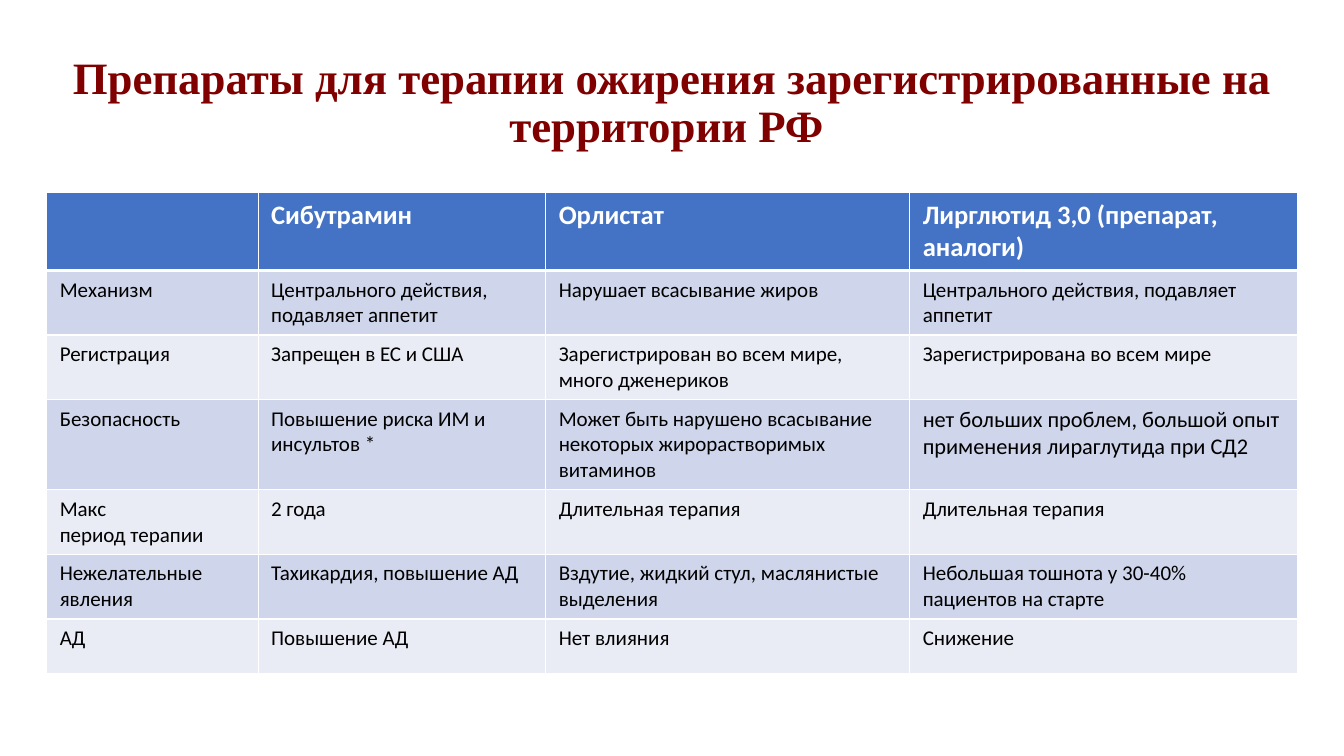
from dataclasses import dataclass

from lxml.etree import SubElement
from pptx import Presentation
from pptx.dml.color import RGBColor as RGB
from pptx.enum.text import MSO_ANCHOR as ANCHOR, PP_ALIGN as ALIGN
from pptx.oxml.ns import qn
from pptx.util import Pt


@dataclass(frozen=True)
class Theme:
    """Colours, fonts and type sizes of the slide."""
    title_font: str = "Times New Roman"
    table_font: str = "Calibri"
    title_color: str = "800000"
    header_fill: str = "4472C4"
    bands: tuple = ("CFD5EA", "E9EBF5")
    white: str = "FFFFFF"
    black: str = "000000"
    title_size: float = 32
    header_size: float = 19
    body_size: float = 15
    accent_size: float = 16
    border: float = 1
    header_border: float = 3


THEME = Theme()
LEFT, WIDTH = 33.4, 893.5
TITLE = "Препараты для терапии ожирения зарегистрированные на территории РФ "
COLUMNS = (151, 205.5, 260, 277)
ROW_HEIGHTS = (38.9, 44.7, 44.7, 62.6, 44.7, 44.7, 38.9)
ROWS = (
    ("", "Сибутрамин", "Орлистат", "Лирглютид 3,0 (препарат, аналоги)"),
    ("Механизм", "Центрального действия, подавляет аппетит",
     "Нарушает всасывание жиров", "Центрального действия, подавляет аппетит"),
    ("Регистрация", "Запрещен в ЕС и США",
     "Зарегистрирован во всем мире, много дженериков", "Зарегистрирована во всем мире"),
    ("Безопасность", "Повышение риска ИМ и инсультов *",
     "Может быть нарушено всасывание некоторых жирорастворимых витаминов",
     "нет больших проблем, большой опыт применения лираглутида при СД2"),
    ("Макс\nпериод терапии", "2 года", "Длительная терапия", "Длительная терапия"),
    ("Нежелательные явления", "Тахикардия, повышение АД",
     "Вздутие, жидкий стул, маслянистые выделения",
     "Небольшая тошнота у 30-40% пациентов на старте"),
    ("АД", "Повышение АД", "Нет влияния", "Снижение"),
)
ACCENT_CELL = (3, 3)


def style_font(font, color, **values):
    """Apply the colour and the given font attributes."""
    for name, value in values.items():
        setattr(font, name, value)
    font.color.rgb = RGB.from_string(color)


def add_title(slide, text):
    """Add the centred title."""
    tf = slide.shapes.add_textbox(Pt(LEFT), Pt(54), Pt(WIDTH), Pt(41)).text_frame
    tf.word_wrap = True
    tf.vertical_anchor = ANCHOR.MIDDLE
    p = tf.paragraphs[0]
    p.alignment = ALIGN.CENTER
    p.line_spacing = 0.9
    r = p.add_run()
    r.text = text
    style_font(r.font, THEME.title_color, name=THEME.title_font,
               size=Pt(THEME.title_size), bold=True)


def add_borders(cell, top, bottom):
    """Draw white borders around a cell."""
    tc_pr = cell._tc.get_or_add_tcPr()
    widths = {"L": THEME.border, "R": THEME.border, "T": top, "B": bottom}
    for side, width in widths.items():
        ln = SubElement(tc_pr, qn(f"a:ln{side}"), w=str(Pt(width)))
        fill = SubElement(ln, qn("a:solidFill"))
        SubElement(fill, qn("a:srgbClr"), val=THEME.white)


def fill_cell(cell, text, row, col):
    """Set the borders, fill, margins and text of a cell."""
    header = row == 0
    add_borders(cell, THEME.header_border if row == 1 else THEME.border,
                THEME.header_border if header else THEME.border)
    cell.fill.solid()
    cell.fill.fore_color.rgb = RGB.from_string(
        THEME.header_fill if header else THEME.bands[(row - 1) % 2])
    margins = {"left": 9.3, "right": 9.3, "top": 4.7, "bottom": 4.7}
    for side, margin in margins.items():
        setattr(cell, f"margin_{side}", Pt(margin))
    size = THEME.header_size if header else THEME.body_size
    if (row, col) == ACCENT_CELL:
        size = THEME.accent_size
    cell.text_frame.text = text
    for p in cell.text_frame.paragraphs:
        for r in p.runs:
            style_font(r.font, THEME.white if header else THEME.black,
                       name=THEME.table_font, size=Pt(size), bold=header)


def add_drug_table(slide):
    """Add the table that compares the drugs."""
    table = slide.shapes.add_table(
        len(ROWS), len(COLUMNS), Pt(LEFT), Pt(137.7), Pt(WIDTH), Pt(sum(ROW_HEIGHTS))).table
    table.horz_banding = False
    for column, width in zip(table.columns, COLUMNS):
        column.width = Pt(width)
    for i, (height, texts) in enumerate(zip(ROW_HEIGHTS, ROWS)):
        table.rows[i].height = Pt(height)
        for j, text in enumerate(texts):
            fill_cell(table.cell(i, j), text, i, j)


def main():
    """Build and save the slide."""
    prs = Presentation()
    prs.slide_width, prs.slide_height = Pt(960), Pt(540)
    s = prs.slides.add_slide(prs.slide_layouts[6])
    add_drug_table(s)
    add_title(s, TITLE)
    prs.save("out.pptx")


if __name__ == "__main__":
    main()
